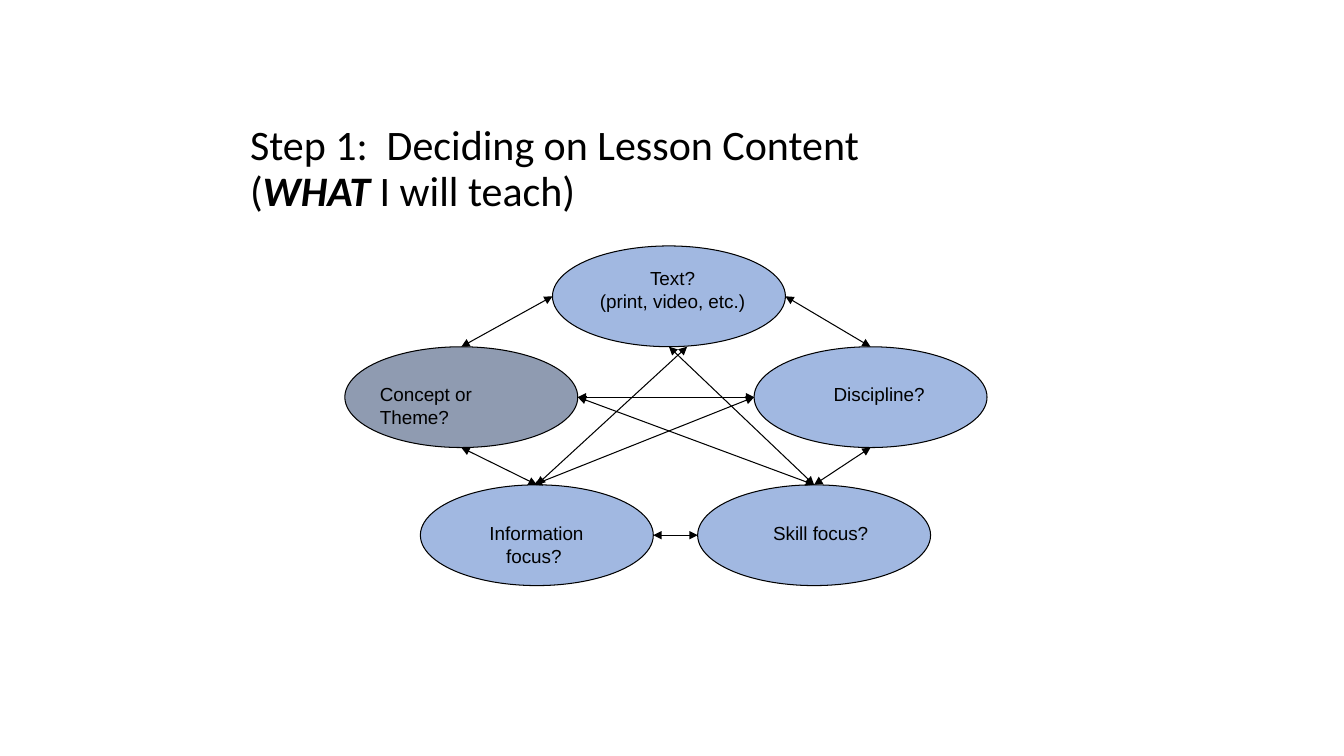
from lxml.etree import SubElement as Sub
from pptx import Presentation
from pptx.dml.color import RGBColor
from pptx.enum.shapes import MSO_CONNECTOR as Conn, MSO_SHAPE as Shape
from pptx.enum.text import MSO_ANCHOR as Anchor, MSO_AUTO_SIZE as Fit, PP_ALIGN as Align
from pptx.oxml.ns import qn
from pptx.util import Inches, Pt

BLACK = RGBColor(0x00, 0x00, 0x00)
BLUE = RGBColor(0x44, 0x72, 0xC4)
NAVY = RGBColor(0x20, 0x38, 0x64)

deck = Presentation()
deck.slide_width, deck.slide_height = Inches(13.33), Inches(7.5)
slide = deck.slides.add_slide(deck.slide_layouts[5])


def share(*parts):
    sides = (deck.slide_width, deck.slide_height)
    return [round(sides[i % 2] * part / 100) for i, part in enumerate(parts)]


def style(item, **form):
    for name, value in form.items():
        setattr(item, name, value)


title = slide.shapes.title
left, top, width, height = share(17.85, 19.2, 64.37, 6.53)
style(title, left=left, top=top, width=width, height=height)
style(title.text_frame, auto_size=Fit.NONE, word_wrap=True, vertical_anchor=Anchor.MIDDLE)
para = title.text_frame.paragraphs[0]
style(para, alignment=Align.LEFT, line_spacing=0.9)
for words, strong in (("Step 1:  Deciding on Lesson Content ", False), (None, False),
                      ("(", False), ("WHAT ", True), ("I will teach)", False)):
    if words is None:
        para.add_line_break()
        continue
    run = para.add_run()
    run.text = words
    style(run.font, name="Calibri", size=Pt(30), bold=strong, italic=strong)
    run.font.color.rgb = BLACK

WIDE, HIGH = 17.33, 13.33
nodes = {
    "text": (41.11, 32.53, BLUE),
    "field": (56.11, 45.87, BLUE),
    "theme": (25.66, 45.87, NAVY),
    "skill": (51.91, 64.13, BLUE),
    "info": (31.28, 64.13, BLUE),
}
for x, y, color in nodes.values():
    oval = slide.shapes.add_shape(Shape.OVAL, *share(x, y, WIDE, HIGH))
    oval.shadow.inherit = False
    oval.fill.solid()
    oval.fill.fore_color.rgb = color
    tint = oval.fill._xPr.find(qn("a:solidFill"))[0]
    Sub(tint, qn("a:alpha"), val="50000")
    oval.line.color.rgb = BLACK
    oval.line.width = Pt(0.75)

sites = {"top": (0.5, 0), "left": (0, 0.5), "low": (0.5, 1), "right": (1, 0.5)}
links = (
    ("info", "top", 0, "theme", "low", 0),
    ("field", "low", 0, "skill", "top", 0),
    ("info", "right", 0, "skill", "left", 0),
    ("theme", "top", 0, "text", "left", 0),
    ("text", "right", 0, "field", "top", 0),
    ("theme", "right", 0, "field", "left", 0),
    ("info", "top", 0, "text", "low", 1.35),
    ("skill", "top", 0, "text", "low", 0),
    ("info", "top", -0.23, "field", "left", 0),
    ("skill", "top", 0, "theme", "right", 0),
)
for link in links:
    ends = []
    for node, site, shift in (link[:3], link[3:]):
        x, y, color = nodes[node]
        across, down = sites[site]
        ends += [x + across * WIDE + shift, y + down * HIGH]
    arrow = slide.shapes.add_connector(Conn.STRAIGHT, *share(*ends))
    arrow.line.color.rgb = BLACK
    arrow.line.width = Pt(0.75)
    for tip in ("a:headEnd", "a:tailEnd"):
        Sub(arrow.line._get_or_add_ln(), qn(tip), type="triangle")
    Sub(arrow._element.spPr, qn("a:effectLst"))

labels = (
    (" Information focus?", (33.16, 68.4, 13.13, 7.47), Align.CENTER, Anchor.TOP, True),
    ("Skill focus?", (53.79, 68.4, 14.55, 4.4), Align.CENTER, Anchor.TOP, True),
    ("Concept or Theme?", (27.53, 50, 13.58, 7.47), Align.LEFT, Anchor.TOP, True),
    ("Text?\n(print, video, etc.)", (42.99, 34.93, 14.1, 6.67), Align.CENTER, Anchor.MIDDLE, True),
    ("Discipline?", (61.29, 50, 8.4, 4.4), Align.LEFT, Anchor.TOP, False),
)
for words, place, align, anchor, wrap in labels:
    frame = slide.shapes.add_textbox(*share(*place)).text_frame
    frame.text = words
    fit = Fit.NONE if anchor == Anchor.MIDDLE else Fit.SHAPE_TO_FIT_TEXT
    style(frame, word_wrap=wrap, vertical_anchor=anchor, auto_size=fit)
    for para in frame.paragraphs:
        para.alignment = align
        style(para.runs[0].font, name="Arial", size=Pt(13.5))
        para.runs[0].font.color.rgb = BLACK

deck.save("out.pptx")
